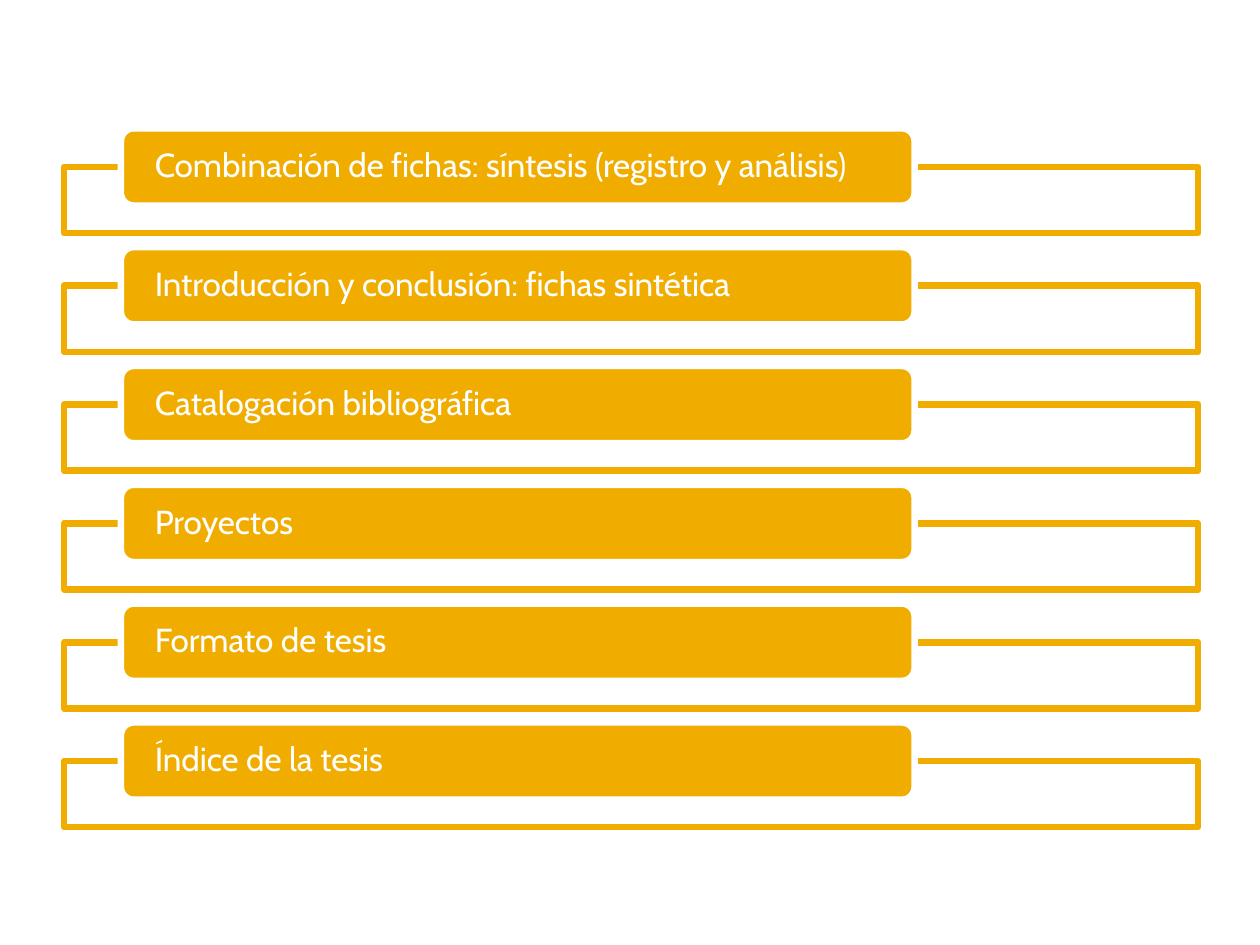
from lxml import etree
from pptx import Presentation
from pptx.dml.color import RGBColor
from pptx.enum import shapes, text
from pptx.oxml import ns
from pptx.util import Pt

AMBER = RGBColor(0xF0, 0xAD, 0x00)
WHITE = RGBColor(0xFF, 0xFF, 0xFF)
TOPICS = [
    "Combinación de fichas: síntesis (registro y análisis)",
    "Introducción y conclusión: fichas sintética",
    "Catalogación bibliográfica",
    "Proyectos",
    "Formato de tesis",
    "Índice de la tesis",
]
FIRST_TOP = 73.3
ROW_PITCH = 67.9
FRAME_DROP = 22.1


class TopicList:
    """Draws framed topic labels in one style on the current slide."""

    def __init__(self, slide, font="Cabin", size=19, line_width=3.78):
        self.slide = slide
        self.font = font
        self.size = size
        self.line_width = line_width

    def box(self, kind, left, top, width, height, fill, line):
        shape = self.slide.shapes.add_shape(
            kind, Pt(left), Pt(top), Pt(width), Pt(height))
        shape.shadow.inherit = False
        shape.fill.solid()
        shape.fill.fore_color.rgb = fill
        shape.line.color.rgb = line
        shape.line.width = Pt(self.line_width)
        return shape

    def frame(self, top):
        shape = self.box(shapes.MSO_SHAPE.RECTANGLE, 36.7, top, 648, 37.8,
                         WHITE, AMBER)
        color = shape.fill._xPr.find(ns.qn("a:solidFill"))[0]
        etree.SubElement(color, ns.qn("a:alpha"), val="90000")

    def label(self, top, topic):
        shape = self.box(shapes.MSO_SHAPE.ROUNDED_RECTANGLE, 69.1, top, 453.6, 44.2,
                         AMBER, WHITE)
        frame = shape.text_frame
        frame.text = topic
        frame.word_wrap = True
        frame.vertical_anchor = text.MSO_ANCHOR.MIDDLE
        frame.margin_left = frame.margin_right = Pt(17.2)
        frame.margin_top = frame.margin_bottom = Pt(0)
        paragraph = frame.paragraphs[0]
        paragraph.alignment = text.PP_ALIGN.LEFT
        paragraph.line_spacing = 0.9
        font = paragraph.runs[0].font
        font.name = self.font
        font.size = Pt(self.size)
        font.color.rgb = WHITE


def main():
    presentation = Presentation()
    presentation.slide_width = Pt(720)
    presentation.slide_height = Pt(540)
    slide = presentation.slides.add_slide(presentation.slide_layouts[6])
    topic_list = TopicList(slide)
    for row, topic in enumerate(TOPICS):
        top = FIRST_TOP + row * ROW_PITCH
        topic_list.frame(top + FRAME_DROP)
        topic_list.label(top, topic)
    presentation.save("out.pptx")


if __name__ == "__main__":
    main()
